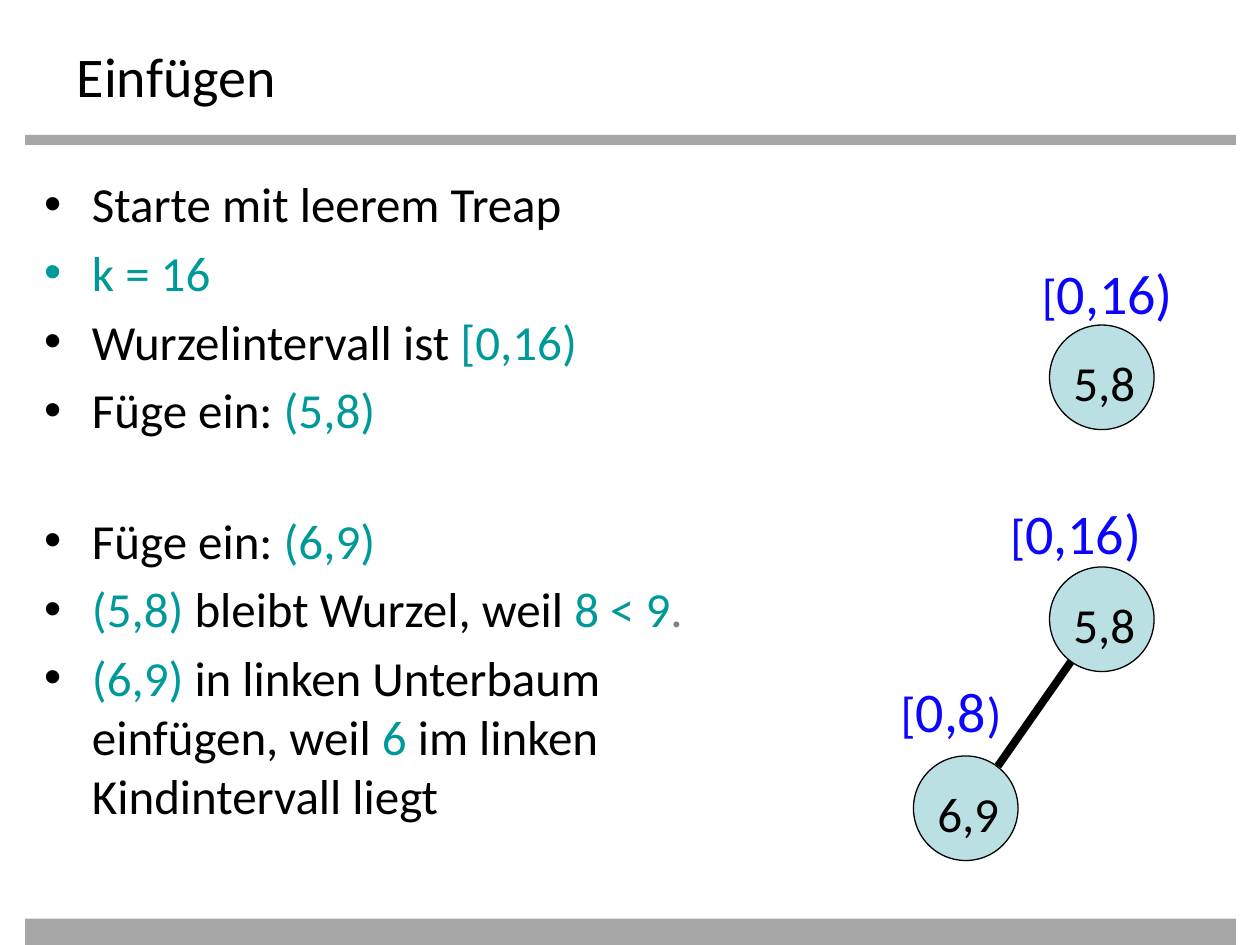
from lxml.etree import SubElement
from pptx import Presentation
from pptx.dml.color import RGBColor
from pptx.enum.shapes import MSO_CONNECTOR, MSO_SHAPE
from pptx.enum.text import MSO_ANCHOR, MSO_AUTO_SIZE, PP_ALIGN
from pptx.oxml.ns import qn
from pptx.util import Inches, Pt

BLACK = RGBColor(0x00, 0x00, 0x00)
TEAL = RGBColor(0x00, 0x99, 0x99)
GRAY = RGBColor(0x80, 0x80, 0x80)
BAR_GRAY = RGBColor(0xA6, 0xA6, 0xA6)
BLUE = RGBColor(0x0B, 0x05, 0xFF)
NODE_FILL = RGBColor(0xBB, 0xE0, 0xE3)
FONT = "Calibri"
DIAMETER = 0.83

TITLE = "Einfügen"
FIRST_INSERT = [
    [("Starte mit leerem Treap", BLACK)],
    [("k = 16", TEAL)],
    [("Wurzelintervall ist ", BLACK), ("[0,16)", TEAL)],
    [("Füge ein: ", BLACK), ("(5,8)", TEAL)],
]
SECOND_INSERT = [
    [("Füge ein: ", BLACK), ("(6,9)", TEAL)],
    [("(5,8) ", TEAL), ("bleibt Wurzel, weil ", BLACK), ("8 < 9", TEAL), (".", GRAY)],
    [("(6,9) ", TEAL), ("in linken Unterbaum \neinfügen, weil ", BLACK),
     ("6 ", TEAL), ("im linken \nKindintervall liegt", BLACK)],
]
STEPS = [
    (FIRST_INSERT, (0.25, 1.33, 5.25, 2.75), None),
    (SECOND_INSERT, (0.25, 4, 7.25, 3.5), BLACK),
]
BARS = [(0.2, 1.07, 9.61, 0.08), (0.2, 7.29, 9.61, 0.21)]
NODES = [("5,8", 8.33, 2.58), ("5,8", 8.33, 4.5), ("6,9", 7.25, 6)]
EDGE = (8.5, 5.25, 7.92, 6.08)
INTERVALS = [
    ([("[", 28), ("0,16)", 32)], (8.17, 2, 1.58, 0.64)),
    ([("[", 28), ("0,16)", 32)], (7.92, 3.91, 1.5, 0.64)),
    ([("[", 28), ("0,8", 32), (")", 28)], (7.05, 5.32, 1.25, 0.64)),
]


def inches(box):
    return [Inches(length) for length in box]


def place(shape, box):
    shape.left, shape.top, shape.width, shape.height = inches(box)


def add_text(paragraph, text, size, color):
    for index, line in enumerate(text.split("\n")):
        if index:
            paragraph.add_line_break()
        run = paragraph.add_run()
        run.text = line
        run.font.name, run.font.size = FONT, Pt(size)
        run.font.color.rgb = color


def add_bullet(paragraph, color):
    properties = paragraph._p.get_or_add_pPr()
    properties.set("marL", str(Inches(0.38)))
    properties.set("indent", str(-Inches(0.38)))
    if color is not None:
        bullet_color = SubElement(properties, qn("a:buClr"))
        SubElement(bullet_color, qn("a:srgbClr"), val=str(color))
    SubElement(properties, qn("a:buFont"), typeface="Arial")
    SubElement(properties, qn("a:buChar"), char="•")


def fill_steps(body, steps, box, bullet_color):
    place(body, box)
    frame = body.text_frame
    frame.auto_size = MSO_AUTO_SIZE.NONE
    frame.vertical_anchor = MSO_ANCHOR.TOP
    for index, parts in enumerate(steps):
        paragraph = frame.add_paragraph() if index else frame.paragraphs[0]
        paragraph.space_before = Pt(5.6 if index else 0)
        add_bullet(paragraph, bullet_color)
        for text, color in parts:
            add_text(paragraph, text, 28, color)


def add_solid(slide, kind, box, color):
    solid = slide.shapes.add_shape(kind, *inches(box))
    solid.shadow.inherit = False
    solid.fill.solid()
    solid.fill.fore_color.rgb = color
    solid.line.fill.background()
    return solid


def add_label(slide, parts, box, color):
    label = slide.shapes.add_textbox(*inches(box))
    label.text_frame.word_wrap = True
    for text, size in parts:
        add_text(label.text_frame.paragraphs[0], text, size, color)


def add_node(slide, key, left, top):
    node = add_solid(slide, MSO_SHAPE.OVAL, (left, top, DIAMETER, DIAMETER), NODE_FILL)
    node.line.color.rgb = BLACK
    node.line.width = Pt(0.75)
    add_label(slide, [(key, 28)], (left + 0.09, top + 0.17, 0.75, 0.57), BLACK)


def add_edge(slide, ends):
    edge = slide.shapes.add_connector(MSO_CONNECTOR.STRAIGHT, *inches(ends))
    edge.line.color.rgb = BLACK
    edge.line.width = Pt(4.5)
    SubElement(edge._element.spPr, qn("a:effectLst"))


def main():
    deck = Presentation()
    deck.slide_width, deck.slide_height = Inches(10), Inches(7.5)
    slide = deck.slides.add_slide(deck.slide_layouts.get_by_name("Two Content"))

    title, *bodies = slide.placeholders
    place(title, (0.51, 0.28, 9, 0.55))
    title.text_frame.auto_size = MSO_AUTO_SIZE.NONE
    title.text_frame.vertical_anchor = MSO_ANCHOR.TOP
    heading = title.text_frame.paragraphs[0]
    heading.alignment = PP_ALIGN.LEFT
    add_text(heading, TITLE, 32, BLACK)

    for body, (steps, box, bullet_color) in zip(bodies, STEPS):
        fill_steps(body, steps, box, bullet_color)
    for box in BARS:
        add_solid(slide, MSO_SHAPE.RECTANGLE, box, BAR_GRAY)
    for key, left, top in NODES:
        add_node(slide, key, left, top)
    add_edge(slide, EDGE)
    for parts, box in INTERVALS:
        add_label(slide, parts, box, BLUE)

    deck.save("out.pptx")


if __name__ == "__main__":
    main()
